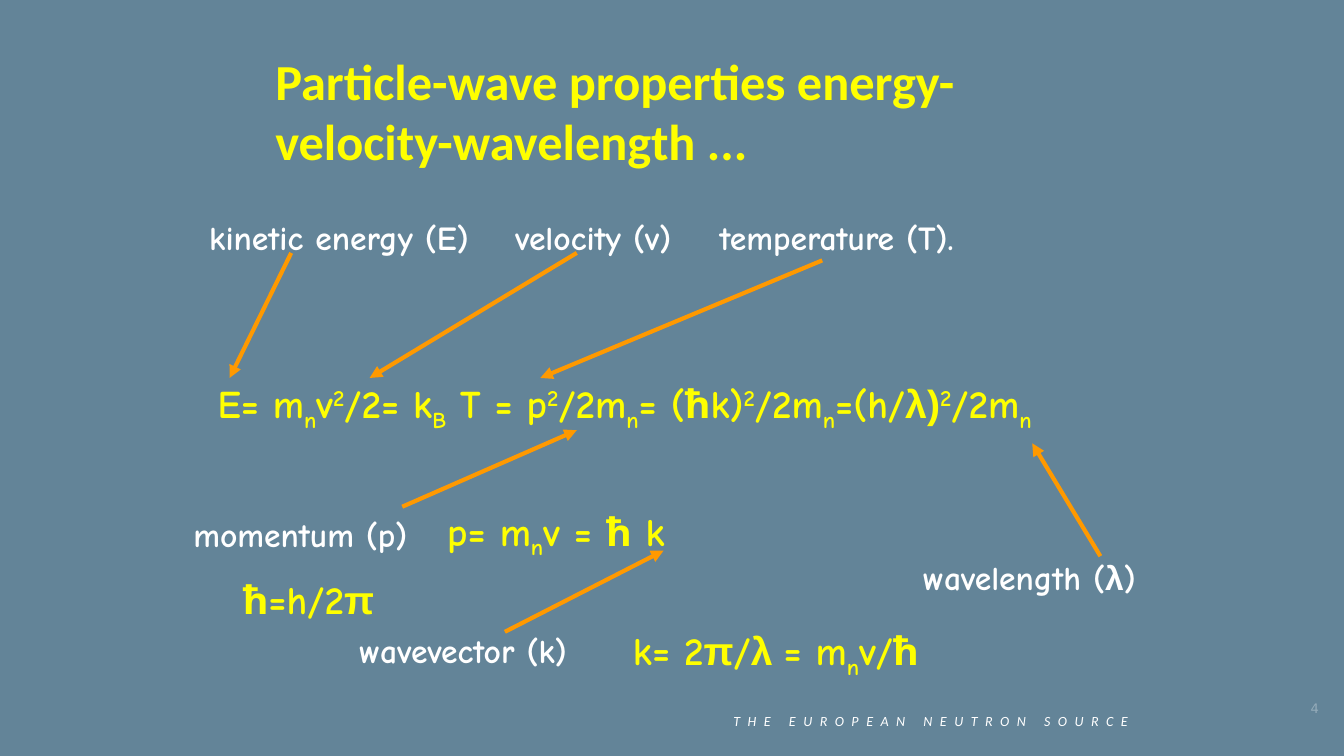
import dataclasses
import itertools
import typing

import lxml.etree
import pptx
import pptx.dml.color
import pptx.enum.shapes
import pptx.enum.text
import pptx.oxml.ns
import pptx.util

BLUE = "638498"
YELLOW = "FFFF00"
WHITE = "FFFFFF"
ORANGE = "FF9900"
GREY = "95ACBA"
HAND = "Comic Neue"
SYMBOL = "Arial"
SHIFTS = {"_": -25000, "^": 30000}


@dataclasses.dataclass(frozen=True)
class Note:
    """Bold marked-up text: a white label or a yellow equation."""
    text: str
    left: float
    top: float
    width: float
    equation: bool = False
    tabs: tuple[float, ...] = ()


class Arrow(typing.NamedTuple):
    x1: float
    y1: float
    x2: float
    y2: float


NOTES = [
    Note("kinetic energy (E)\tvelocity (v)\ttemperature (T).", 105, 112.5, 485,
         tabs=(164, 273.5)),
    Note("E= m_nv^2/2= k_B T = p^2/2m_n= (ħk)^2/2m_n=(h/[λ)]^2/2m_n",
         109.5, 199.5, 523.5, equation=True),
    Note("momentum (p)", 96.5, 271.5, 143.5),
    Note("p= m_nv = ħ k", 232.5, 268, 147, equation=True),
    Note("ħ=h/2[π]", 123, 304.5, 88, equation=True),
    Note("wavevector (k)", 185.5, 334, 149),
    Note("k= 2[π]/[λ ]= m_nv/ħ", 332, 332, 181, equation=True),
    Note("wavelength ([λ])", 487.5, 295, 140.5),
]
ARROWS = [
    Arrow(156, 135.5, 123, 202.5),
    Arrow(309, 135.5, 198, 202.5),
    Arrow(440.5, 139.5, 289.5, 202.5),
    Arrow(270.5, 338.5, 355.5, 295),
    Arrow(589.5, 298, 553, 237.5),
    Arrow(215.5, 271.5, 309, 230.5),
]


def rgb(code: str) -> pptx.dml.color.RGBColor:
    return pptx.dml.color.RGBColor.from_string(code)


def styled_characters(text: str, font: str) -> typing.Iterator[tuple[str, str, int]]:
    """Yield character, font, baseline; _ and ^ shift one character, [] marks symbols."""
    face, shift = font, 0
    for char in text:
        if char in SHIFTS:
            shift = SHIFTS[char]
        elif char == "[":
            face = SYMBOL
        elif char == "]":
            face = font
        else:
            yield char, face, shift
            shift = 0


def add_text(page, text: str, left: float, top: float, width: float, height: float, *,
             size: float, color: str, font: str = HAND, bold: bool = False,
             italic: bool = False, centred: bool = False, spacing: float = 0,
             tabs: tuple[float, ...] = ()):
    box = page.shapes.add_textbox(*map(pptx.util.Pt, (left, top, width, height)))
    frame = box.text_frame
    frame.word_wrap = True
    para = frame.paragraphs[0]
    if centred:
        para.alignment = pptx.enum.text.PP_ALIGN.CENTER
    if tabs:
        properties = para._p.get_or_add_pPr()
        stops = lxml.etree.SubElement(properties, pptx.oxml.ns.qn("a:tabLst"))
        for position in tabs:
            lxml.etree.SubElement(stops, pptx.oxml.ns.qn("a:tab"),
                                  pos=str(pptx.util.Pt(position)), algn="l")
    groups = itertools.groupby(styled_characters(text, font), key=lambda item: item[1:])
    for (face, shift), characters in groups:
        span = para.add_run()
        span.text = "".join(item[0] for item in characters)
        span.font.name = face
        span.font.size = pptx.util.Pt(size)
        span.font.bold = bold
        span.font.italic = italic
        span.font.color.rgb = rgb(color)
        if shift:
            span.font._element.set("baseline", str(shift))
        if spacing:
            span.font._element.set("spc", str(round(spacing * 100)))
    return box


def add_note(page, note: Note) -> None:
    size, color, height = (21, YELLOW, 32.5) if note.equation else (18, WHITE, 29)
    add_text(page, note.text, note.left, note.top, note.width, height,
             size=size, color=color, bold=True, tabs=note.tabs)


def add_arrow(page, arrow: Arrow) -> None:
    line = page.shapes.add_connector(pptx.enum.shapes.MSO_CONNECTOR.STRAIGHT,
                                     *map(pptx.util.Pt, arrow))
    line.line.color.rgb = rgb(ORANGE)
    line.line.width = pptx.util.Pt(2.25)
    lxml.etree.SubElement(line.line._get_or_add_ln(), pptx.oxml.ns.qn("a:tailEnd"),
                          type="triangle")
    lxml.etree.SubElement(line._element.spPr, pptx.oxml.ns.qn("a:effectLst"))


def add_title(page) -> None:
    box = add_text(page, "Particle-wave properties energy-velocity-wavelength ...",
                   147.5, 11, 384.5, 80.5, size=27, color=YELLOW, font="Calibri", bold=True)
    frame = box.text_frame
    frame.vertical_anchor = pptx.enum.text.MSO_ANCHOR.BOTTOM
    frame.margin_left = frame.margin_right = frame.margin_bottom = 0


def main() -> None:
    deck = pptx.Presentation()
    deck.slide_width = pptx.util.Pt(720)
    deck.slide_height = pptx.util.Pt(405)
    page = deck.slides.add_slide(deck.slide_layouts[6])
    page.background.fill.solid()
    page.background.fill.fore_color.rgb = rgb(BLUE)

    add_text(page, "4", 695, 371.5, 34, 16, size=7, color=GREY, font="DejaVu Sans")
    add_text(page, "THE EUROPEAN NEUTRON SOURCE", 367, 378, 263, 16.5, size=7.5,
             color=WHITE, font="Calibri", italic=True, centred=True, spacing=4)
    add_title(page)
    for note in NOTES:
        add_note(page, note)
    for arrow in ARROWS:
        add_arrow(page, arrow)
    deck.save("out.pptx")


if __name__ == "__main__":
    main()
